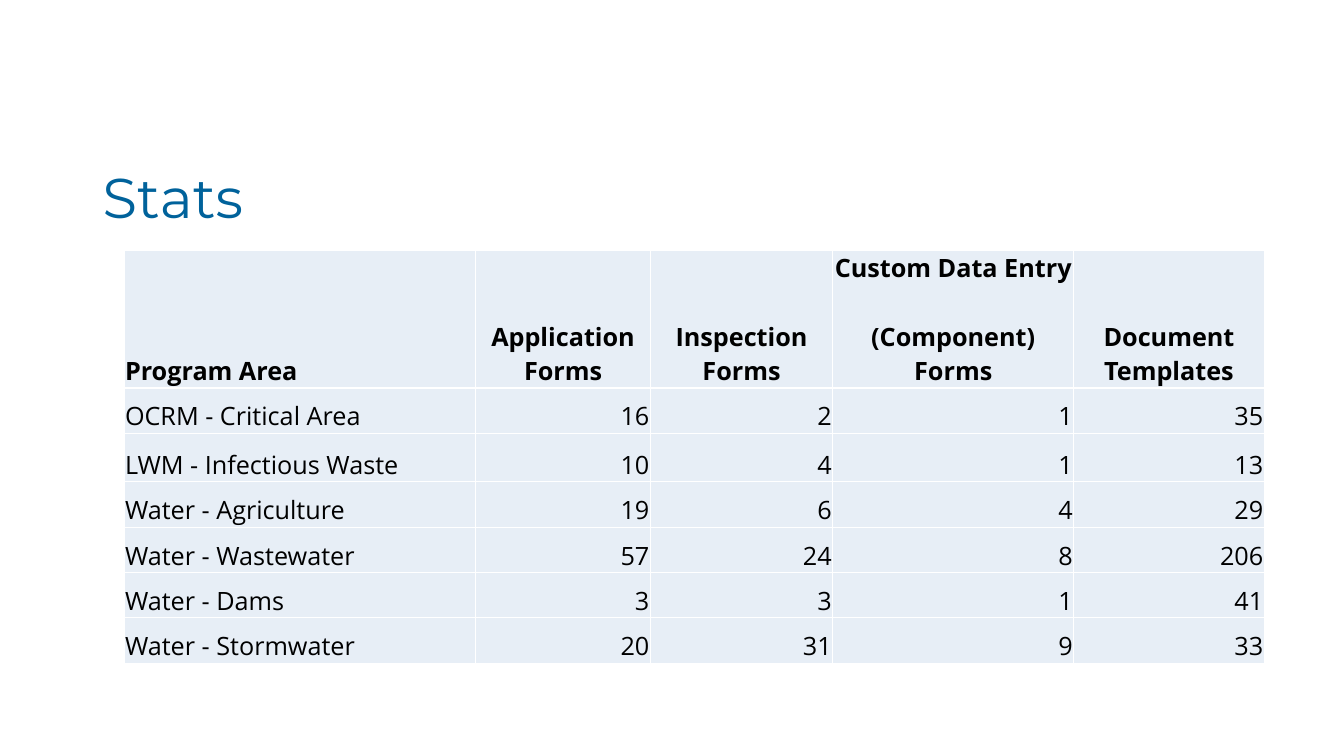
from copy import deepcopy
from dataclasses import dataclass

from lxml.etree import SubElement
from pptx import Presentation
from pptx.dml.color import RGBColor
from pptx.enum.text import MSO_ANCHOR, PP_ALIGN
from pptx.oxml.ns import qn
from pptx.util import Inches, Pt


@dataclass(frozen=True)
class Theme:
    title_font: str = "Montserrat"
    body_font: str = "Open Sans"
    title_size: int = 40
    body_size: int = 18
    title_color: str = "00629B"
    body_color: str = "000000"
    cell_fill: str = "E7EEF6"
    border: str = "FFFFFF"


THEME = Theme()
COLUMN_WIDTHS = [3.49, 1.73, 1.81, 2.39, 1.89]
ROW_HEIGHTS = [1.37, 0.45, 0.48, 0.45, 0.45, 0.45, 0.45]
HEADERS = [
    "Program Area",
    "Application\nForms",
    "Inspection Forms",
    "Custom Data Entry \n(Component) Forms",
    "Document\nTemplates",
]
PROGRAMS = [
    ("OCRM - Critical Area", 16, 2, 1, 35),
    ("LWM - Infectious Waste", 10, 4, 1, 13),
    ("Water - Agriculture", 19, 6, 4, 29),
    ("Water - Wastewater", 57, 24, 8, 206),
    ("Water - Dams", 3, 3, 1, 41),
    ("Water - Stormwater", 20, 31, 9, 33),
]


def write_text(frame, text, *, font=THEME.body_font, size=THEME.body_size,
               color=THEME.body_color, bold=False, align=PP_ALIGN.LEFT, spacing=1.0):
    """Fill the frame's first paragraph; a newline becomes a line break."""
    para = frame.paragraphs[0]
    para.text = text
    para.alignment = align
    para.line_spacing = spacing
    for span in para.runs:
        span.font.name = font
        span.font.size = Pt(size)
        span.font.bold = bold
        span.font.color.rgb = RGBColor.from_string(color)
    # A line break carries its own format, which sets the height of an empty line.
    for line_break in para._p.findall(qn("a:br")):
        line_break.append(deepcopy(para.runs[0]._r.rPr))


def add_title(page, text):
    box = page.shapes.add_textbox(Inches(0.92), Inches(1.26), Inches(11.5), Inches(1.45))
    box.text_frame.word_wrap = True
    box.text_frame.vertical_anchor = MSO_ANCHOR.MIDDLE
    write_text(box.text_frame, text, font=THEME.title_font, size=THEME.title_size,
               color=THEME.title_color, spacing=0.9)


def set_borders(cell):
    properties = cell._tc.get_or_add_tcPr()
    for side in ("a:lnL", "a:lnR", "a:lnT", "a:lnB"):
        line = SubElement(properties, qn(side), w=str(Pt(1)))
        fill = SubElement(line, qn("a:solidFill"))
        SubElement(fill, qn("a:srgbClr"), val=THEME.border)


def style_cell(cell):
    cell.margin_left = cell.margin_right = cell.margin_top = Inches(0.01)
    cell.margin_bottom = Inches(0)
    cell.vertical_anchor = MSO_ANCHOR.BOTTOM
    set_borders(cell)
    cell.fill.solid()
    cell.fill.fore_color.rgb = RGBColor.from_string(THEME.cell_fill)


def add_stats_table(page):
    rows = [HEADERS, *PROGRAMS]
    table = page.shapes.add_table(
        len(rows), len(HEADERS), Inches(1.23), Inches(2.48),
        Inches(sum(COLUMN_WIDTHS)), Inches(sum(ROW_HEIGHTS))).table
    for column, width in zip(table.columns, COLUMN_WIDTHS):
        column.width = Inches(width)
    for row, height in zip(table.rows, ROW_HEIGHTS):
        row.height = Inches(height)

    for row_index, values in enumerate(rows):
        is_header = row_index == 0
        value_align = PP_ALIGN.CENTER if is_header else PP_ALIGN.RIGHT
        for column_index, value in enumerate(values):
            cell = table.cell(row_index, column_index)
            style_cell(cell)
            write_text(cell.text_frame, str(value), bold=is_header,
                       align=value_align if column_index else PP_ALIGN.LEFT)


def main():
    deck = Presentation()
    deck.slide_width = Inches(13.33)
    deck.slide_height = Inches(7.5)
    page = deck.slides.add_slide(deck.slide_layouts[6])
    add_title(page, "Stats")
    add_stats_table(page)
    deck.save("out.pptx")


if __name__ == "__main__":
    main()
